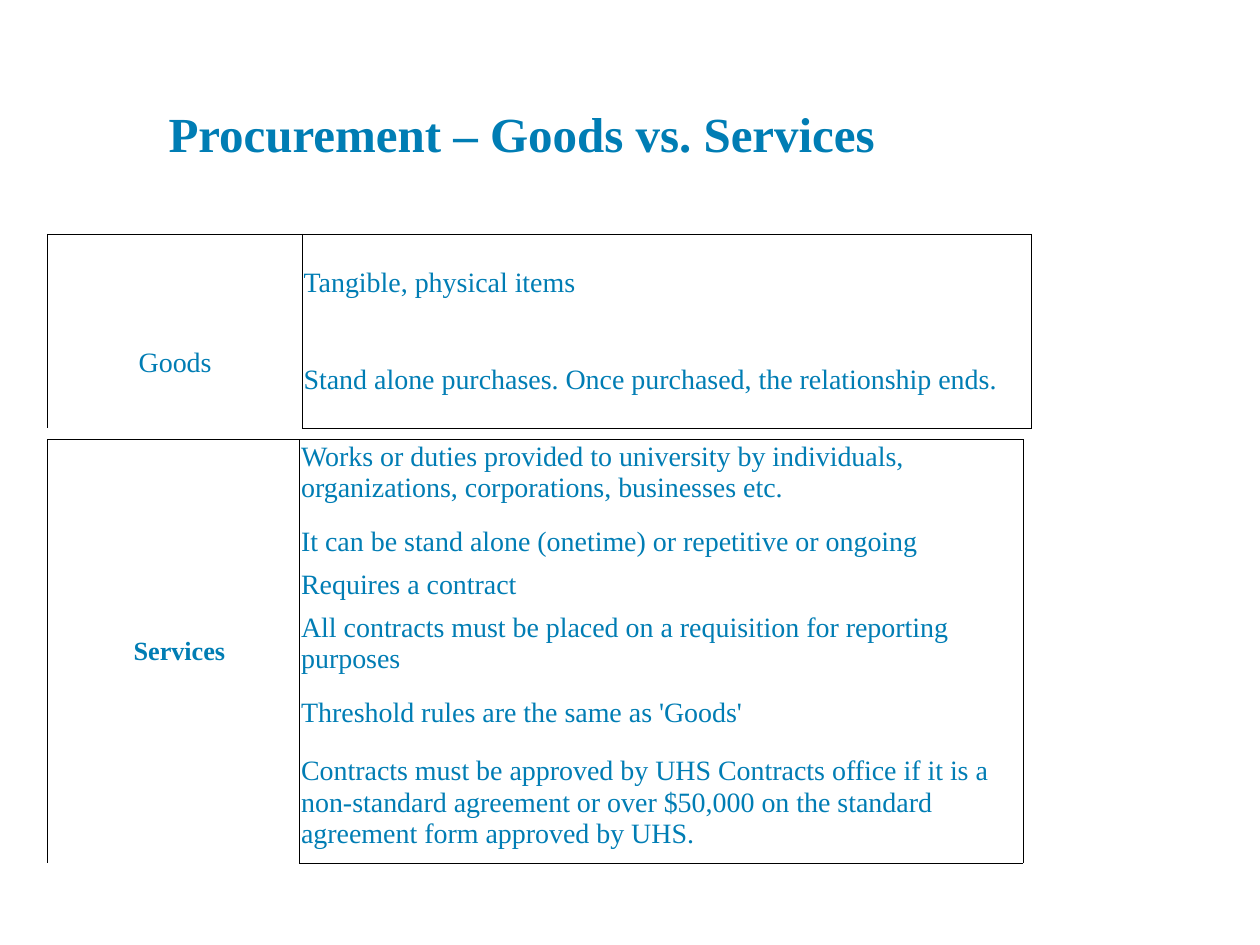
from collections import namedtuple
from lxml.etree import SubElement
from pptx import Presentation
from pptx.dml.color import RGBColor as Color
from pptx.enum.text import MSO_ANCHOR as Anchor, PP_ALIGN as Align
from pptx.oxml.ns import qn
from pptx.util import Inches, Pt

COLORS = {"text": "007DB4", "border": "000000"}
GRID_COLUMNS, GRID_ROWS = 100, 75
DECK_WIDTH, DECK_HEIGHT = Inches(10), Inches(7.5)
Box = namedtuple("Box", "left top width height")

TITLE = "Procurement – Goods vs. Services"
GOODS = [
    "Tangible, physical items",
    "Stand alone purchases. Once purchased, the relationship ends.",
]
SERVICES = [
    "Works or duties provided to university by individuals,\v"
    "organizations, corporations, businesses etc.",
    "It can be stand alone (onetime) or repetitive or ongoing",
    "Requires a contract",
    "All contracts must be placed on a requisition for reporting purposes",
    "Threshold rules are the same as 'Goods'",
    "Contracts must be approved by UHS Contracts office if it is a "
    "non-standard agreement or over $50,000 on the standard agreement "
    "form approved by UHS.",
]


def across(columns):
    return round(DECK_WIDTH * columns / GRID_COLUMNS)


def down(rows):
    return round(DECK_HEIGHT * rows / GRID_ROWS)


def place(box):
    return across(box.left), down(box.top), across(box.width), down(box.height)


def set_all(target, values):
    for name, value in values.items():
        setattr(target, name, value)


def write(para, text, align=Align.LEFT, size=16, bold=False):
    para.text = text
    para.alignment = align
    set_all(para.font, {"name": "Times New Roman", "size": Pt(size), "bold": bold})
    para.font.color.rgb = Color.from_string(COLORS["text"])


def draw_borders(cell, sides):
    properties = cell._tc.get_or_add_tcPr()
    for side in "LRTB":
        line = SubElement(properties, qn(f"a:ln{side}"), w=str(Pt(0.5)))
        if side in sides:
            fill = SubElement(line, qn("a:solidFill"))
            SubElement(fill, qn("a:srgbClr"), val=COLORS["border"])
        else:
            SubElement(line, qn("a:noFill"))
    cell.fill.background()


def add_title(page, box):
    frame = page.shapes.add_textbox(*place(box)).text_frame
    set_all(frame, {
        "word_wrap": True,
        "vertical_anchor": Anchor.MIDDLE,
        "margin_top": down(5.5),
        "margin_bottom": down(0.5),
    })
    write(frame.paragraphs[0], TITLE, Align.CENTER, 28, True)


def add_category(page, box, label_width, row_heights, items, anchor, label, label_format, inset):
    table = page.shapes.add_table(len(items), 2, *place(box)).table
    set_all(table, {"first_row": False, "horz_banding": False})
    for column, width in zip(table.columns, (label_width, box.width - label_width)):
        column.width = across(width)

    last = len(items) - 1
    for index, (item, height) in enumerate(zip(items, row_heights)):
        table.rows[index].height = down(height)
        edges = ("T" if index == 0 else "") + ("B" if index == last else "")
        for cell in table.rows[index].cells:
            set_all(cell, {
                "margin_left": across(0.1),
                "margin_right": across(0.1),
                "margin_top": down(0.1),
                "margin_bottom": 0,
                "vertical_anchor": anchor,
            })
            draw_borders(cell, "LR" + edges)
        write(table.cell(index, 1).text_frame.paragraphs[0], item)

    heading = table.cell(0, 0)
    heading.merge(table.cell(last, 0))
    set_all(heading, {"vertical_anchor": Anchor.MIDDLE, **inset})
    write(heading.text_frame.paragraphs[0], label, **label_format)


def main():
    deck = Presentation()
    set_all(deck, {"slide_width": DECK_WIDTH, "slide_height": DECK_HEIGHT})
    page = deck.slides.add_slide(deck.slide_layouts[6])

    add_title(page, Box(4.5, 3.2, 73.8, 9.7))
    add_category(
        page, Box(3.8, 18.6, 78.1, 15.1), 20.2, [7.7, 7.4], GOODS, Anchor.MIDDLE,
        "Goods", {"align": Align.CENTER}, {"margin_top": down(5)},
    )
    add_category(
        page, Box(3.8, 34.9, 77.4, 33.6), 20, [6.8, 3.4, 3.4, 6.8, 4.6, 8.6],
        SERVICES, Anchor.TOP,
        "Services", {"size": 15, "bold": True}, {"margin_left": across(6.8)},
    )
    deck.save("out.pptx")


if __name__ == "__main__":
    main()
